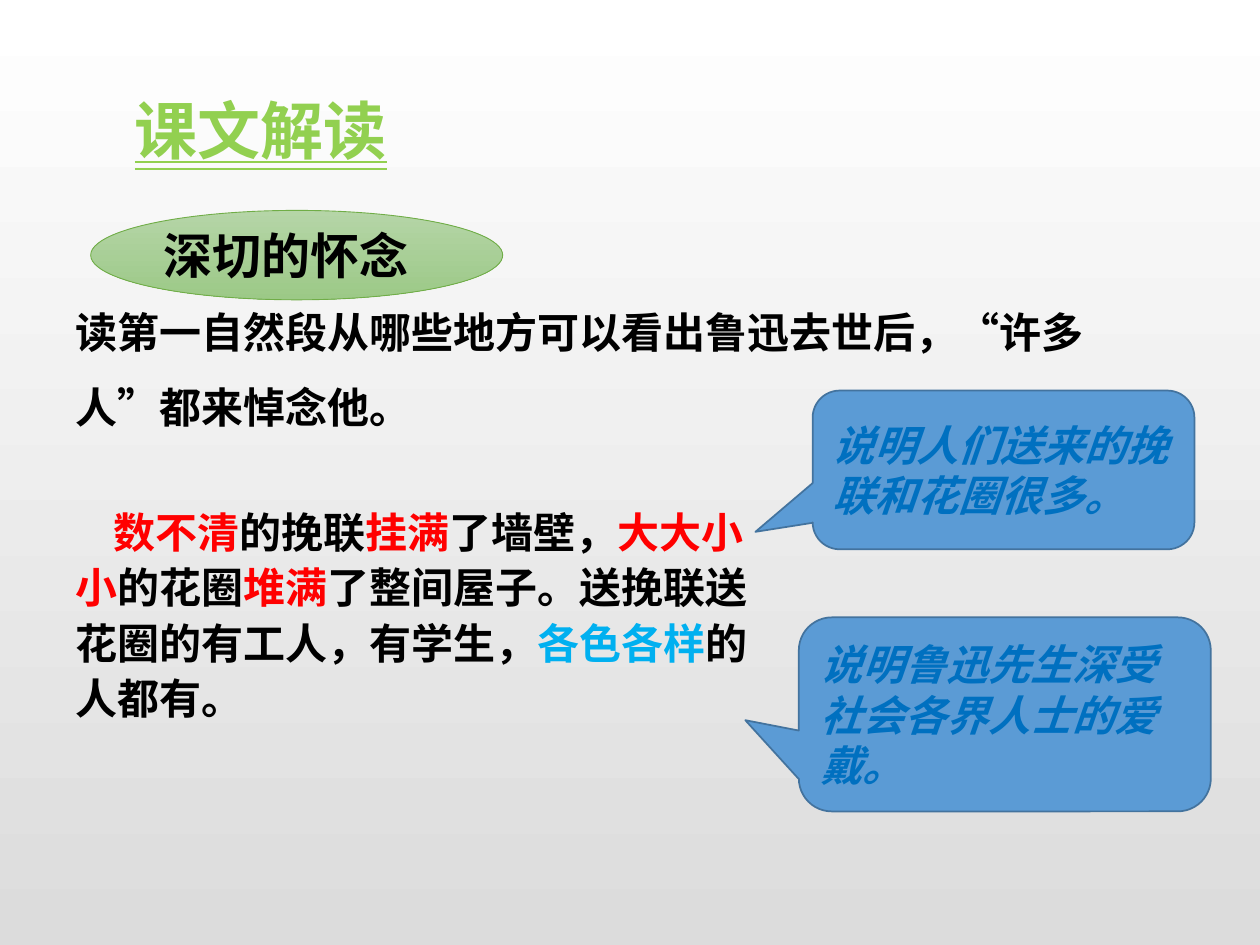
from lxml import etree
from pptx import Presentation
from pptx.dml.color import RGBColor
from pptx.enum.shapes import MSO_SHAPE
from pptx.enum.text import MSO_ANCHOR, MSO_AUTO_SIZE, MSO_UNDERLINE, PP_ALIGN
from pptx.oxml.ns import qn
from pptx.util import Inches, Pt

ELLIPSE = MSO_SHAPE.OVAL
CALLOUT = MSO_SHAPE.ROUNDED_RECTANGULAR_CALLOUT
TOP, MIDDLE = MSO_ANCHOR.TOP, MSO_ANCHOR.MIDDLE
LEFT = PP_ALIGN.LEFT
NO_AUTOFIT = MSO_AUTO_SIZE.NONE
DOUBLE = MSO_UNDERLINE.DOUBLE_LINE

FONT = "Noto Sans CJK SC"
BLACK = RGBColor(0x00, 0x00, 0x00)
RED = RGBColor(0xFF, 0x00, 0x00)
SKY = RGBColor(0x00, 0xB0, 0xF0)
LIME = RGBColor(0x92, 0xD0, 0x50)
WHITE = RGBColor(0xFF, 0xFF, 0xFF)
GREY = RGBColor(0xDC, 0xDC, 0xDC)
GREEN_LIGHT = RGBColor(0xB5, 0xD5, 0xA7)
GREEN_DARK = RGBColor(0x9C, 0xC9, 0x87)
GREEN_LINE = RGBColor(0x70, 0xAD, 0x47)
BLUE = RGBColor(0x5B, 0x9B, 0xD5)
BLUE_LINE = RGBColor(0x43, 0x73, 0x9E)
BLUE_TEXT = RGBColor(0x00, 0x70, 0xC0)

MARGIN = 0.5
PASSAGE = [
    ("数不清", RED), ("的挽联", BLACK), ("挂满", RED), ("了墙壁，", BLACK),
    ("大大小小", RED), ("的花圈", BLACK), ("堆满", RED),
    ("了整间屋子。送挽联送花圈的有工人，有学生，", BLACK),
    ("各色各样", SKY), ("的人都有。", BLACK),
]
CALLOUTS = [
    ("说明人们送来的挽联和花圈很多。", (6.45, 3.1, 3.03, 1.26), (-0.65, 0.39, 0.17)),
    ("说明鲁迅先生深受社会各界人士的爱戴。", (6.34, 4.9, 3.27, 1.54), (-0.63, 0.03, 0.17)),
]


def fill_downwards(fill, top_color, bottom_color):
    """Give a fill a gradient that runs from top to bottom."""
    fill.gradient()
    fill.gradient_angle = 270
    for stop, color in zip(fill.gradient_stops, (top_color, bottom_color)):
        stop.color.rgb = color


def write(shape, pieces, size, anchor=TOP, spacing=None, indent=0):
    """Write one bold paragraph of (text, color) pieces and return it."""
    frame = shape.text_frame
    frame.word_wrap = True
    frame.auto_size = NO_AUTOFIT
    frame.vertical_anchor = anchor
    paragraph = frame.paragraphs[0]
    paragraph.alignment = LEFT
    if spacing:
        paragraph.line_spacing = spacing
    if indent:
        paragraph._p.get_or_add_pPr().set("indent", str(Inches(indent)))
    for text, color in pieces:
        run = paragraph.add_run()
        run.text = text
        run.font.color.rgb = color
        run.font.name = FONT
        properties = run._r.get_or_add_rPr()
        etree.SubElement(properties, qn("a:ea")).set("typeface", FONT)
    paragraph.font.size = Pt(size)
    paragraph.font.bold = True
    return paragraph


def add_title(slide, text):
    title = slide.shapes.title
    title.left, title.top = Inches(0.97), Inches(0.68)
    title.width, title.height = Inches(2.23), Inches(0.71)
    paragraph = write(title, [(text, LIME)], 36)
    paragraph.font.underline = DOUBLE
    title.text_frame.word_wrap = False


def add_text(slide, pieces, box, spacing, indent=0):
    text_box = slide.shapes.add_textbox(*map(Inches, box))
    write(text_box, pieces, 24, spacing=spacing, indent=indent)


def add_outlined_shape(slide, kind, box, line_color, line_width):
    shape = slide.shapes.add_shape(kind, *map(Inches, box))
    shape.shadow.inherit = False
    shape.line.color.rgb = line_color
    shape.line.width = Pt(line_width)
    return shape


def add_heading_oval(slide, text):
    oval = add_outlined_shape(slide, ELLIPSE, (0.72, 1.67, 3.27, 0.71), GREEN_LINE, 0.5)
    fill_downwards(oval.fill, GREEN_LIGHT, GREEN_DARK)
    write(oval, [(text, BLACK)], 28, MIDDLE)


def add_callout(slide, text, box, adjustments):
    callout = add_outlined_shape(slide, CALLOUT, box, BLUE_LINE, 1)
    callout.fill.solid()
    callout.fill.fore_color.rgb = BLUE
    for index, value in enumerate(adjustments):
        callout.adjustments[index] = value
    paragraph = write(callout, [(text, BLUE_TEXT)], 24, MIDDLE)
    paragraph.font.italic = True


def main():
    presentation = Presentation()
    presentation.slide_width, presentation.slide_height = Inches(10), Inches(7.5)
    slide = presentation.slides.add_slide(presentation.slide_layouts.get_by_name("Title Only"))
    fill_downwards(slide.background.fill, WHITE, GREY)

    question = "读第一自然段从哪些地方可以看出鲁迅去世后，“许多人”都来悼念他。"
    add_text(slide, [(question, BLACK)], (MARGIN, 2.18, 8.86, 1.22), 1.5)
    add_title(slide, "课文解读")
    add_text(slide, PASSAGE, (MARGIN, 3.93, 5.61, 1.82), 1.1, indent=0.3)
    add_heading_oval(slide, "深切的怀念")
    for text, box, adjustments in CALLOUTS:
        add_callout(slide, text, box, adjustments)

    presentation.save("out.pptx")


if __name__ == "__main__":
    main()
